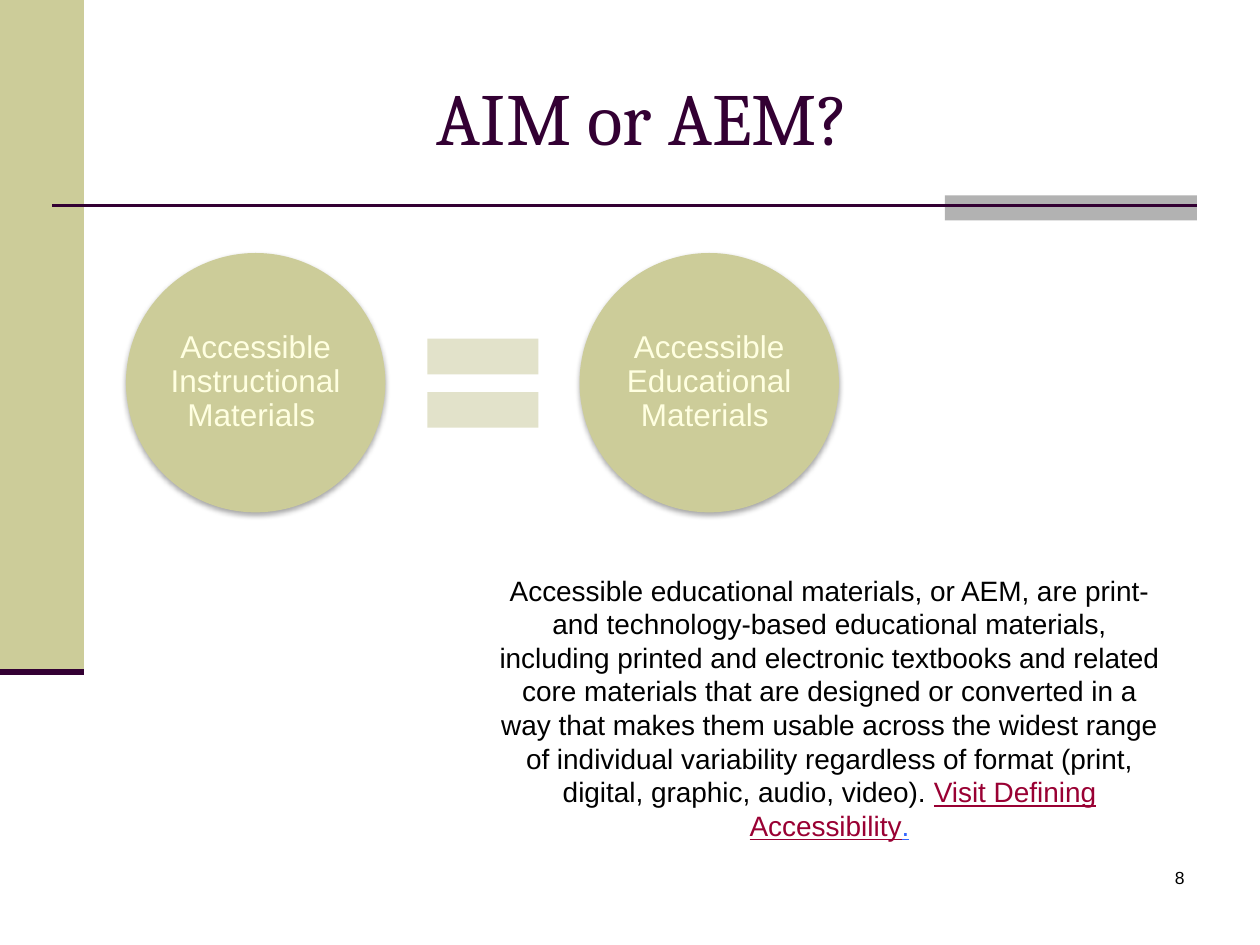
import dataclasses
import pptx
import pptx.dml.color
import pptx.enum.shapes
import pptx.enum.text
import pptx.oxml
import pptx.oxml.ns
import pptx.util

SHAPE = pptx.enum.shapes.MSO_SHAPE
ALIGN = pptx.enum.text.PP_ALIGN
ANCHOR = pptx.enum.text.MSO_ANCHOR
NS = pptx.oxml.ns.nsdecls("a")

# Grid: 120 columns by 90 rows, so one cell is 1/12 inch
CELL = 1 / 12
PLUM, KHAKI, BLACK = "330033", "CCCC99", "000000"
SHADOW = (
    f'<a:effectLst {NS}><a:outerShdw blurRad="39370" dist="22860" dir="5400000" '
    'rotWithShape="0"><a:srgbClr val="000000"><a:alpha val="35000"/></a:srgbClr>'
    "</a:outerShdw></a:effectLst>"
)


@dataclasses.dataclass
class Box:
    col: float
    row: float
    wide: float
    high: float

    def place(self) -> list:
        return [grid(n) for n in (self.col, self.row, self.wide, self.high)]


@dataclasses.dataclass
class Part:
    text: str
    color: str = BLACK
    line: bool = False


def grid(cells: float):
    return pptx.util.Inches(cells * CELL)


def paint(target, color: str) -> None:
    target.rgb = pptx.dml.color.RGBColor.from_string(color)


def add_form(slide, kind, box: Box, color: str):
    form = slide.shapes.add_shape(kind, *box.place())
    form.shadow.inherit = False
    form.fill.solid()
    paint(form.fill.fore_color, color)
    form.line.fill.background()
    return form


def add_rule(slide, left: float, right: float, row: float, width: float) -> None:
    rule = slide.shapes.add_connector(
        pptx.enum.shapes.MSO_CONNECTOR.STRAIGHT,
        grid(left), grid(row), grid(right), grid(row))
    paint(rule.line.color, PLUM)
    rule.line.width = pptx.util.Pt(width)
    rule._element.spPr.append(pptx.oxml.parse_xml(f"<a:effectLst {NS}/>"))


def write(frame, parts: list[Part], size: float, align=ALIGN.CENTER,
          anchor=ANCHOR.TOP, font: str = "Arial"):
    frame.word_wrap = True
    frame.vertical_anchor = anchor
    para = frame.paragraphs[0]
    para.alignment = align
    for part in parts:
        run = para.add_run()
        run.text = part.text
        run.font.name = font
        run.font.size = pptx.util.Pt(size)
        run.font.underline = part.line
        paint(run.font.color, part.color)
    return para


def add_text(slide, box: Box, parts: list[Part], size: float, **style):
    frame = slide.shapes.add_textbox(*box.place()).text_frame
    write(frame, parts, size, **style)
    return frame


def add_disc(slide, col: float, text: str) -> None:
    disc = add_form(slide, SHAPE.OVAL, Box(col, 24.1, 24.7, 24.7), KHAKI)
    props = disc._element.spPr
    props.remove(props.find(pptx.oxml.ns.qn("a:effectLst")))
    props.append(pptx.oxml.parse_xml(SHADOW))
    frame = disc.text_frame
    for side in ("left", "right", "top", "bottom"):
        setattr(frame, f"margin_{side}", pptx.util.Inches(0.03))
    para = write(frame, [Part(text, "FFFFE1")], 18, anchor=ANCHOR.MIDDLE)
    para.line_spacing = 0.9


def main() -> None:
    deck = pptx.Presentation()
    deck.slide_width, deck.slide_height = grid(120), grid(90)
    slide = deck.slides.add_slide(deck.slide_layouts[6])

    # Side band and header rule
    add_form(slide, SHAPE.RECTANGLE, Box(0, 0, 8, 64), KHAKI)
    add_form(slide, SHAPE.RECTANGLE, Box(90, 18.6, 24, 2.4), "B2B2B2")
    add_rule(slide, 5, 114, 19.6, 1.5)
    add_rule(slide, 0, 8, 64, 3.5)

    # Title, set slightly left of centre
    title = add_text(slide, Box(12, 3.6, 102, 15), [Part("AIM or AEM?", PLUM)], 42,
                     anchor=ANCHOR.MIDDLE, font="Cambria")
    title.margin_right = pptx.util.Inches(0.4)

    # Equation of the two terms
    add_disc(slide, 12, "Accessible Instructional Materials ")
    add_form(slide, SHAPE.MATH_EQUAL, Box(38.8, 29.3, 14.4, 14.4), "E2E2CA")
    add_disc(slide, 55.2, "Accessible Educational Materials ")

    # Definition
    body = add_text(slide, Box(46, 54, 66, 28), [
        Part("Accessible educational materials, or AEM, are print- and "
             "technology-based educational materials, including printed and "
             "electronic textbooks and related core materials that are designed "
             "or converted in a way that makes them usable across the widest "
             "range of individual variability regardless of format (print, "
             "digital, graphic, audio, video). "),
        Part("Visit Defining Accessibility", "990033", True),
        Part(".", "3366FF", True),
    ], 16)
    body.paragraphs[0].space_before = pptx.util.Pt(3.2)

    # Page number
    add_text(slide, Box(89, 82, 25, 6), [Part("8")], 10, align=ALIGN.RIGHT)

    deck.save("out.pptx")


if __name__ == "__main__":
    main()
